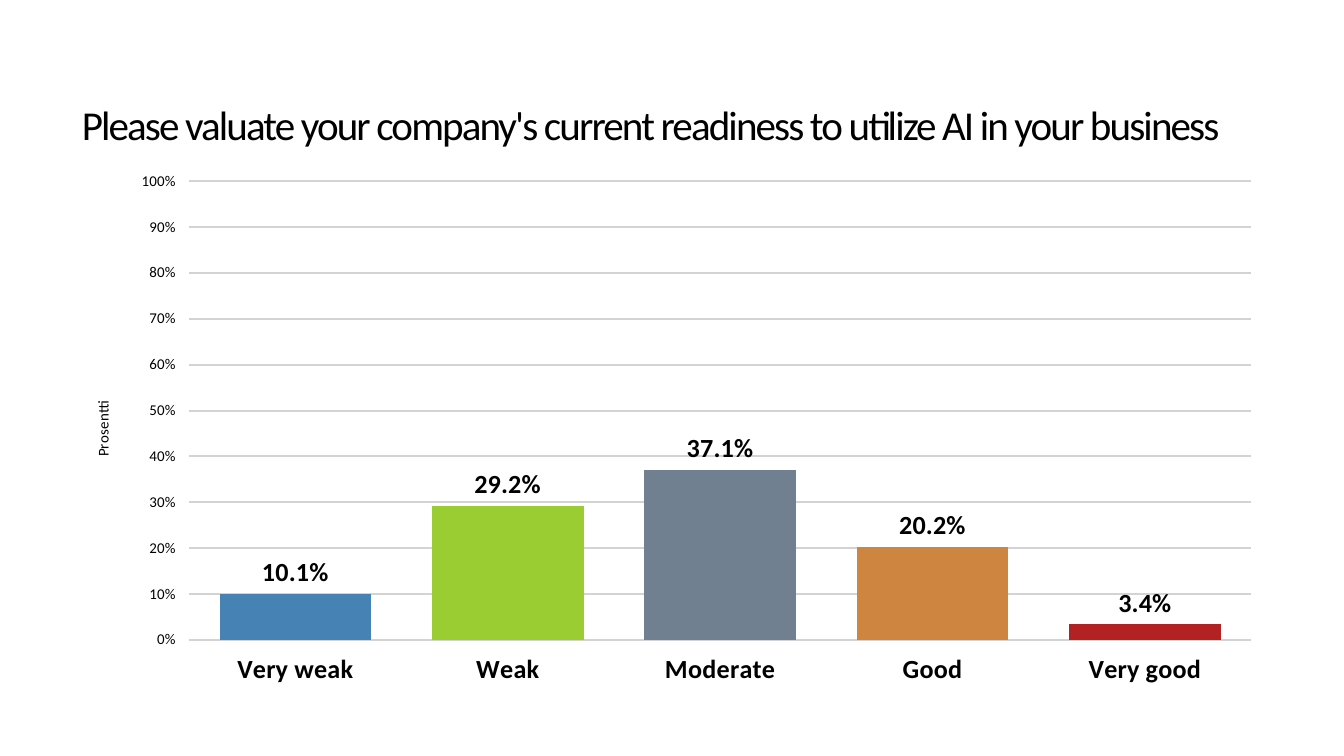
from lxml import etree
from pptx import Presentation
from pptx.chart.data import CategoryChartData
from pptx.dml.color import RGBColor
from pptx.enum import chart as ch, text as tx
from pptx.util import Inches, Pt

COLORS = {
    "text": "000000",
    "grid": "D3D3D3",
    "Very weak": "4682B4",
    "Weak": "9ACD32",
    "Moderate": "708090",
    "Good": "CD853F",
    "Very good": "B22222",
}
READINESS = {
    "Very weak": 0.101,
    "Weak": 0.292,
    "Moderate": 0.371,
    "Good": 0.202,
    "Very good": 0.034,
}


def set_font(font, size, bold=False):
    for name, value in {"name": "Calibri", "size": Pt(size), "bold": bold}.items():
        setattr(font, name, value)
    font.color.rgb = RGBColor.from_string(COLORS["text"])


# Widescreen 16:9 slide
deck = Presentation()
deck.slide_width, deck.slide_height = Inches(10), Inches(10 * 9 / 16)
slide = deck.slides.add_slide(deck.slide_layouts[6])

# Question
question = slide.shapes.add_textbox(
    Inches(0.51), Inches(0.7), Inches(8.98), Inches(0.45)).text_frame
question.word_wrap = True
question.vertical_anchor = tx.MSO_ANCHOR.MIDDLE
wording = question.paragraphs[0].add_run()
wording.text = "Please valuate your company's current readiness to utilize AI in your business"
set_font(wording.font, 22)
wording.font._element.set("spc", "-100")

# Chart of answers
answers = CategoryChartData(number_format="0.0%")
answers.categories = list(READINESS)
answers.add_series("Series 1", list(READINESS.values()))
chart = slide.shapes.add_chart(
    ch.XL_CHART_TYPE.COLUMN_CLUSTERED,
    Inches(0.51), Inches(1.19), Inches(8.98), Inches(3.97), answers).chart
chart.has_legend = False
chart.has_title = False
set_font(chart.font, 18)

# Columns
plot = chart.plots[0]
for name, value in {"gap_width": 40, "overlap": -2, "vary_by_categories": False,
                    "has_data_labels": True}.items():
    setattr(plot, name, value)
columns = plot.series[0]
columns.format.fill.solid()
columns.format.fill.fore_color.rgb = RGBColor.from_string(COLORS["Very weak"])
for i, answer in enumerate(READINESS):
    fill = columns.points[i].format.fill
    fill.solid()
    fill.fore_color.rgb = RGBColor.from_string(COLORS[answer])

# Value labels
labels = plot.data_labels
for name, value in {"show_value": True, "number_format": "0.0%",
                    "number_format_is_linked": False,
                    "position": ch.XL_LABEL_POSITION.OUTSIDE_END}.items():
    setattr(labels, name, value)
set_font(labels.font, 14, True)

# Axes
answer_axis, percent_axis = chart.category_axis, chart.value_axis
for axis, size, bold in ((answer_axis, 14, True), (percent_axis, 8, False)):
    set_font(axis.tick_labels.font, size, bold)
    axis.format.line.fill.background()
    axis.major_tick_mark = ch.XL_TICK_MARK.OUTSIDE
for name, value in {"minimum_scale": 0, "maximum_scale": 1, "major_unit": 0.1,
                    "has_major_gridlines": True}.items():
    setattr(percent_axis, name, value)
percent_axis.tick_labels.number_format = "0%"
percent_axis.tick_labels.number_format_is_linked = False
gridline = percent_axis.major_gridlines.format.line
gridline.width = Pt(1)
gridline.color.rgb = RGBColor.from_string(COLORS["grid"])
unit = percent_axis.axis_title.text_frame.paragraphs[0].add_run()
unit.text = "Prosentti"
set_font(unit.font, 8)

# Inner plot area, as fractions of the chart
C = "{http://schemas.openxmlformats.org/drawingml/2006/chart}"
plot_area = chart._chartSpace.chart.plotArea
for old in plot_area.findall(C + "layout"):
    plot_area.remove(old)
layout = etree.Element(C + "layout")
plot_area.insert(0, layout)
manual = etree.SubElement(layout, C + "manualLayout")
for tag, value in {"layoutTarget": "inner", "xMode": "edge", "yMode": "edge",
                   "x": 0.1, "y": 0.04, "w": 0.88, "h": 0.86}.items():
    etree.SubElement(manual, C + tag).set("val", str(value))

deck.save("out.pptx")
